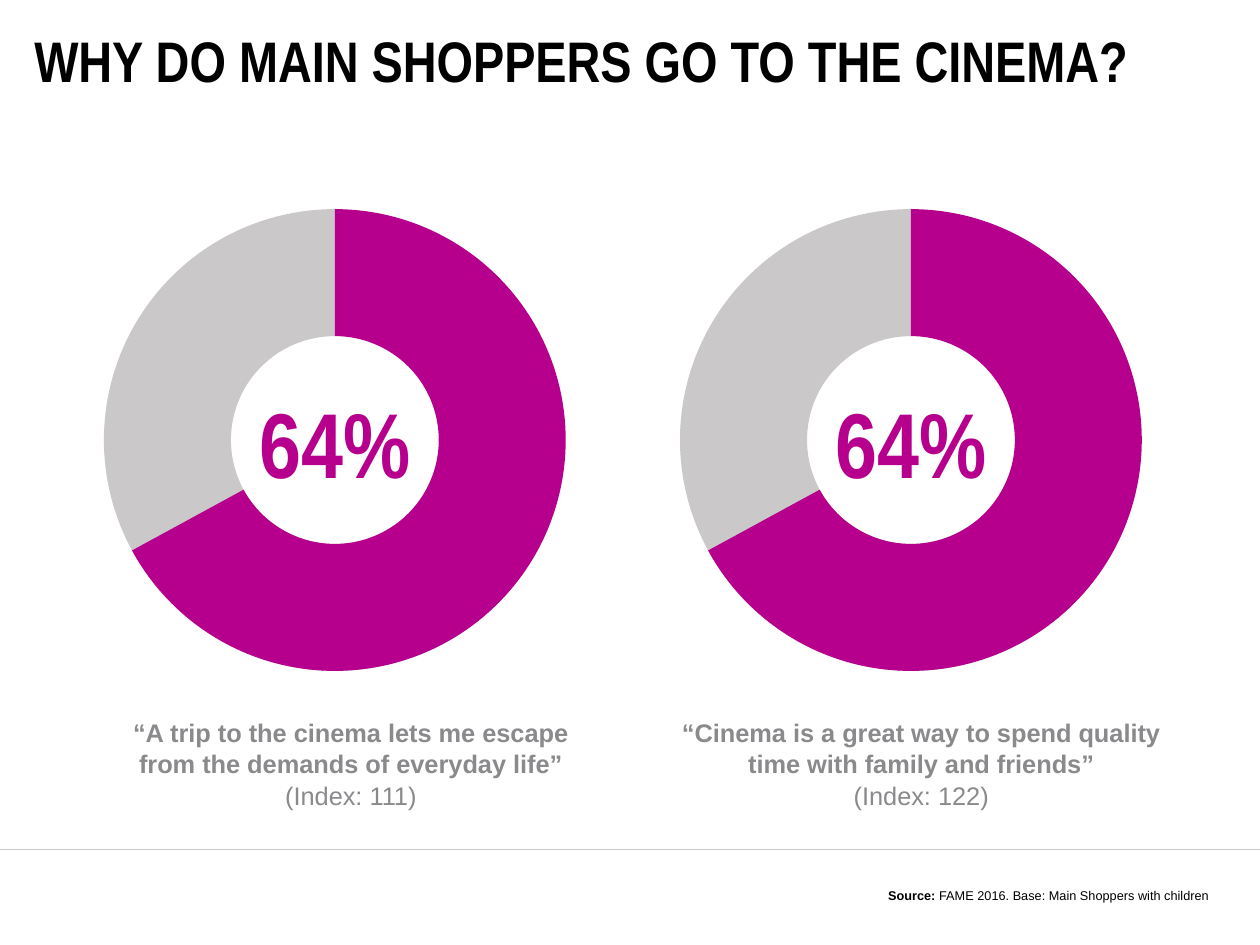
from lxml import etree
from pptx import Presentation
from pptx.dml.color import RGBColor
from pptx.enum.shapes import MSO_CONNECTOR, MSO_SHAPE
from pptx.enum.text import MSO_ANCHOR, PP_ALIGN
from pptx.oxml.ns import qn
from pptx.util import Cm, Inches, Pt

LEFT, CENTER, RIGHT = PP_ALIGN.LEFT, PP_ALIGN.CENTER, PP_ALIGN.RIGHT
TOP, MIDDLE, BOTTOM = MSO_ANCHOR.TOP, MSO_ANCHOR.MIDDLE, MSO_ANCHOR.BOTTOM
BLACK, GREY, SILVER, MAGENTA = "000000", "8A8A8D", "CAC8C8", "B6008D"

prs = Presentation()
prs.slide_width, prs.slide_height = Cm(28), Cm(21)
s = prs.slides.add_slide(prs.slide_layouts[6])


def color(hex_value):
    return RGBColor.from_string(hex_value)


def add_text(box, paragraphs, size, hex_value, font="Arial", align=CENTER,
             anchor=TOP, spacing=None):
    """Each paragraph is a list of (text, bold) runs."""
    tf = s.shapes.add_textbox(*(Inches(v) for v in box)).text_frame
    tf.word_wrap = True
    tf.vertical_anchor = anchor
    for i, runs in enumerate(paragraphs):
        p = tf.paragraphs[0] if i == 0 else tf.add_paragraph()
        p.alignment = align
        p.line_spacing = spacing
        p.font.name, p.font.size = font, Pt(size)
        p.font.color.rgb = color(hex_value)
        for text, bold in runs:
            r = p.add_run()
            r.text, r.font.bold = text, bold
    return tf


# Footer rule
rule_y = Inches(7.43)
line = s.shapes.add_connector(MSO_CONNECTOR.STRAIGHT, 0, rule_y, prs.slide_width, rule_y)
line.line.color.rgb = color(SILVER)
line.line.width = Pt(0.5)
etree.SubElement(line._element.spPr, qn("a:effectLst"))

# Title
tf = add_text((0.3, 0.3, 10.18, 0.45),
              [[("WHY DO MAIN SHOPPERS GO TO THE CINEMA?", True)]],
              36, BLACK, "Arial Narrow", LEFT, MIDDLE)
tf.margin_left = tf.margin_top = tf.margin_right = tf.margin_bottom = 0

# Rings, one per column: arcs as (colour, start, end) in degrees clockwise
# from three o'clock; the magenta arc covers part of the silver one
ring_left, ring_top, ring_size, pitch = 0.91, 1.83, 4.04, 5.04
arcs = [(SILVER, 20.73, 270), (MAGENTA, 270, 151.43)]
columns = [
    ("64%", "“A trip to the cinema lets me escape from the demands of everyday life”",
     "(Index: 111)", 0.91, 4.32),
    ("64%", "“Cinema is a great way to spend quality time with family and friends”",
     "(Index: 122)", 5.8, 4.52),
]
for col, (share, quote, index, quote_left, quote_width) in enumerate(columns):
    x = ring_left + col * pitch
    for hex_value, start, end in arcs:
        sp = s.shapes.add_shape(MSO_SHAPE.BLOCK_ARC, Inches(x), Inches(ring_top),
                                Inches(ring_size), Inches(ring_size))
        sp.shadow.inherit = False
        sp.fill.solid()
        sp.fill.fore_color.rgb = color(hex_value)
        sp.line.fill.background()
        # Angles are stored in 60000ths of a degree, adjustments in 100000ths
        sp.adjustments[0] = start * 0.6
        sp.adjustments[1] = end * 0.6
        sp.adjustments[2] = 0.275
    add_text((x + 0.91, 3.32, 2.22, 1.08), [[(share, True)]],
             58, MAGENTA, "Arial Narrow", anchor=MIDDLE)
    add_text((quote_left, 6.21, quote_width, 0.94),
             [[(quote, True)], [(index, False)]], 16, GREY, spacing=Pt(20))

# Source
add_text((4.81, 7.71, 5.87, 0.24),
         [[("Source: ", True), ("FAME 2016. Base: Main Shoppers with children", False)]],
         8, BLACK, align=RIGHT, anchor=BOTTOM)

prs.save("out.pptx")
